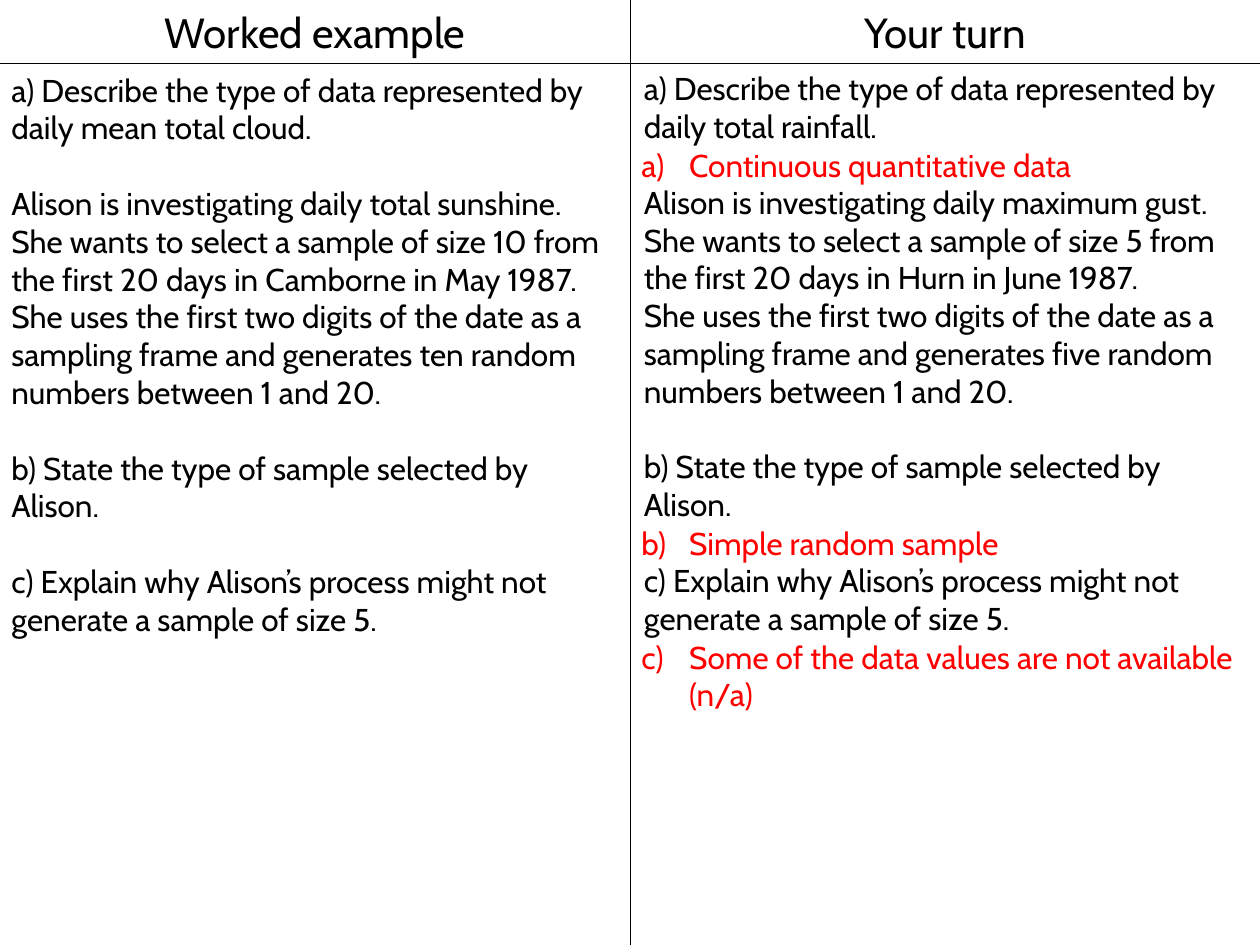
from dataclasses import dataclass

from lxml.etree import SubElement
from pptx import Presentation
from pptx.dml.color import RGBColor
from pptx.enum.shapes import MSO_CONNECTOR
from pptx.enum.text import MSO_ANCHOR, MSO_AUTO_SIZE, PP_ALIGN
from pptx.oxml.ns import qn
from pptx.slide import Slide
from pptx.util import Inches, Pt

BLACK, RED = "000000", "FF0000"
LINE_HEIGHT = 21.6
COLUMN_WIDTH = 5
HEADER_HEIGHT = 0.5
BODY_HEIGHT = 4.64
HANGING_INDENT = 0.38


@dataclass
class Line:
    text: str
    lines_before: int = 0


@dataclass
class TextBlock:
    placeholder: int
    left: float
    top: float
    height: float
    lines: list[Line]
    size: int = 18
    color: str = BLACK
    align: PP_ALIGN = PP_ALIGN.LEFT
    numbered: bool = False


@dataclass
class Rule:
    start: tuple[float, float]
    end: tuple[float, float]


def rgb(value: str) -> RGBColor:
    """Turn a hex string into a colour."""
    return RGBColor.from_string(value)


def question_lines(cloud_or_rain: str, measure: str, count: int, place: str, word: str) -> list[Line]:
    """Word one version of the exercise."""
    return [
        Line(f"a) Describe the type of data represented by daily {cloud_or_rain}."),
        Line(f"Alison is investigating daily {measure}.", 1),
        Line(f"She wants to select a sample of size {count} from the first 20 days in {place} 1987."),
        Line("She uses the first two digits of the date as a sampling frame and "
             f"generates {word} random numbers between 1 and 20."),
        Line("b) State the type of sample selected by Alison.", 1),
        Line("c) Explain why Alison’s process might not generate a sample of size 5.", 1),
    ]


def set_bullet(para, numbered: bool) -> None:
    """Give a paragraph a lettered hanging indent or no bullet at all."""
    properties = para._p.get_or_add_pPr()
    indent = Inches(HANGING_INDENT) if numbered else 0
    for name, value in {"marL": indent, "indent": -indent}.items():
        properties.set(name, str(value))
    if numbered:
        SubElement(properties, qn("a:buFont"), typeface="+mj-lt")
        SubElement(properties, qn("a:buAutoNum"), type="alphaLcParenR")
    else:
        SubElement(properties, qn("a:buNone"))


def fill_block(slide: Slide, block: TextBlock) -> None:
    """Move, format and fill one placeholder."""
    box = slide.placeholders[block.placeholder]
    place = {"left": block.left, "top": block.top, "width": COLUMN_WIDTH, "height": block.height}
    for name, value in place.items():
        setattr(box, name, Inches(value))
    frame = box.text_frame
    frame_format = {"word_wrap": True, "auto_size": MSO_AUTO_SIZE.NONE, "vertical_anchor": MSO_ANCHOR.TOP}
    for name, value in frame_format.items():
        setattr(frame, name, value)
    for index, line in enumerate(block.lines):
        para = frame.add_paragraph() if index else frame.paragraphs[0]
        para_format = {
            "alignment": block.align,
            "line_spacing": 1.0,
            "space_before": Pt(line.lines_before * LINE_HEIGHT),
            "space_after": Pt(0),
        }
        for name, value in para_format.items():
            setattr(para, name, value)
        set_bullet(para, block.numbered)
        span = para.add_run()
        span.text = line.text
        for name, value in {"name": "Cabin", "size": Pt(block.size), "bold": False}.items():
            setattr(span.font, name, value)
        span.font.color.rgb = rgb(block.color)


def draw_rule(slide: Slide, rule: Rule) -> None:
    """Draw one thin dividing line."""
    ends = [Inches(value) for value in (*rule.start, *rule.end)]
    connector = slide.shapes.add_connector(MSO_CONNECTOR.STRAIGHT, *ends)
    connector.line.color.rgb = rgb(BLACK)
    connector.line.width = Pt(0.5)
    SubElement(connector._element.spPr, qn("a:effectLst"))


def main() -> None:
    """Build the two-column exercise slide."""
    deck = Presentation()
    deck.slide_width, deck.slide_height = Inches(10), Inches(7.5)
    page = deck.slides.add_slide(deck.slide_layouts.get_by_name("Comparison"))

    example = question_lines("mean total cloud", "total sunshine", 10, "Camborne in May", "ten")
    turn = question_lines("total rainfall", "maximum gust", 5, "Hurn in June", "five")
    answers = [
        Line("Continuous quantitative data"),
        Line("Simple random sample", 9),
        Line("Some of the data values are not available (n/a)", 2),
    ]
    header = {"size": 24, "align": PP_ALIGN.CENTER}
    blocks = [
        TextBlock(0, 0, 0, HEADER_HEIGHT, [Line("Worked example")], **header),
        TextBlock(3, COLUMN_WIDTH, 0, HEADER_HEIGHT, [Line("Your turn")], **header),
        TextBlock(2, -0.01, 0.51, BODY_HEIGHT, example),
        TextBlock(4, 5.01, 0.5, BODY_HEIGHT, turn),
        TextBlock(1, 4.99, 1.11, BODY_HEIGHT, answers, color=RED, numbered=True),
    ]
    for block in blocks:
        fill_block(page, block)
    for rule in (Rule((0, HEADER_HEIGHT), (10, HEADER_HEIGHT)), Rule((COLUMN_WIDTH, 0), (COLUMN_WIDTH, 7.5))):
        draw_rule(page, rule)
    deck.save("out.pptx")


if __name__ == "__main__":
    main()
